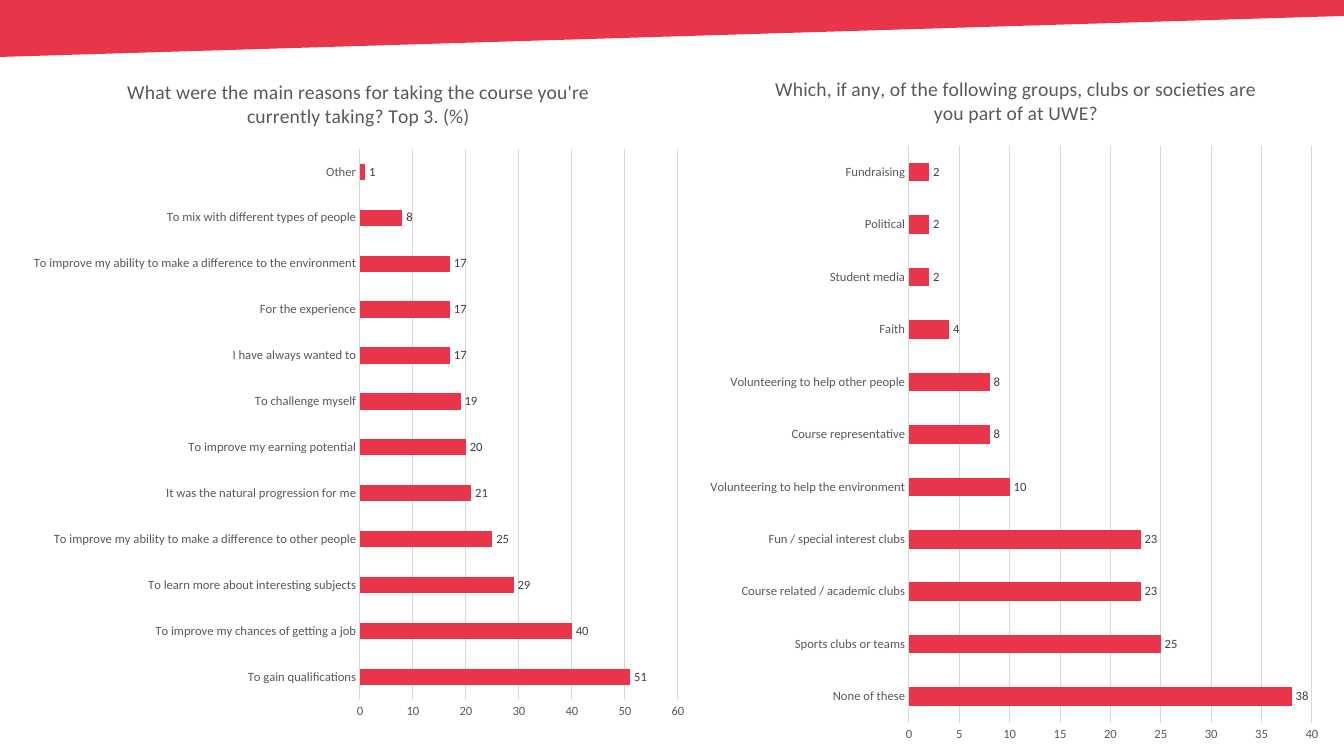
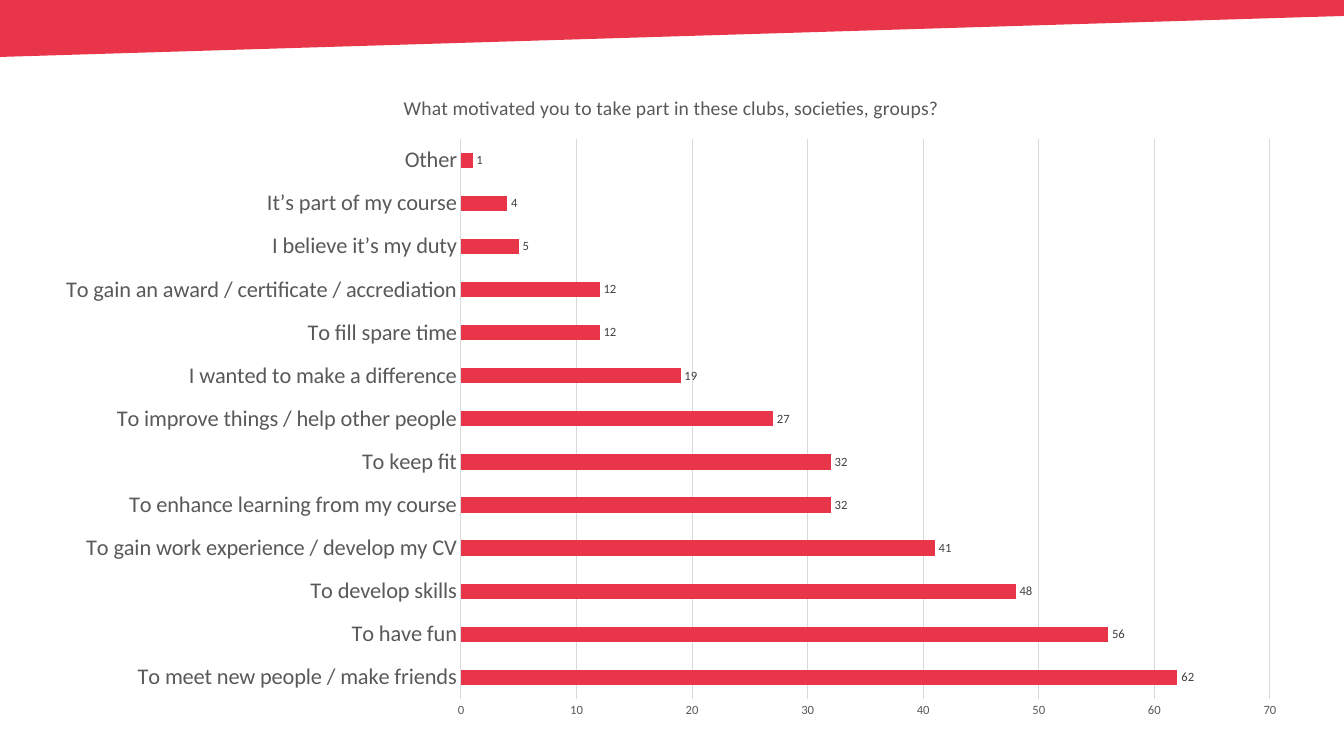
from dataclasses import dataclass

from lxml import etree
from pptx import Presentation
from pptx.chart.data import CategoryChartData
from pptx.dml.color import RGBColor
from pptx.enum.chart import XL_CHART_TYPE as ChartType
from pptx.enum.chart import XL_LABEL_POSITION as LabelPosition
from pptx.enum.chart import XL_TICK_MARK as TickMark
from pptx.oxml.ns import qn
from pptx.util import Pt

PX = 914400 / 100.8
PAGE_WIDTH, PAGE_HEIGHT = 1344, 756


@dataclass(frozen=True)
class Theme:
    font: str = "Calibri"
    accent: str = "E9354A"
    grid: str = "D9D9D9"
    text: str = "595959"
    value_text: str = "404040"
    title_size: int = 14
    label_size: int = 9
    large_label_size: int = 16
    line_width: float = 0.75


THEME = Theme()


@dataclass(frozen=True)
class Box:
    left: int
    top: int
    width: int
    height: int

    def emu(self):
        return [px(n) for n in (self.left, self.top, self.width, self.height)]


@dataclass(frozen=True)
class Survey:
    """A question, its answers from the bottom bar up, and its value scale."""
    question: str
    answers: tuple
    maximum: int
    step: int
    label_size: int = THEME.label_size


REASONS = Survey(
    "What were the main reasons for taking the course you're currently taking? Top 3. (%)",
    (
        ("To gain qualifications", 51),
        ("To improve my chances of getting a job", 40),
        ("To learn more about interesting subjects", 29),
        ("To improve my ability to make a difference to other people", 25),
        ("It was the natural progression for me", 21),
        ("To improve my earning potential", 20),
        ("To challenge myself", 19),
        ("I have always wanted to", 17),
        ("For the experience", 17),
        ("To improve my ability to make a difference to the environment", 17),
        ("To mix with different types of people", 8),
        ("Other", 1),
    ),
    maximum=60, step=10,
)

GROUPS = Survey(
    "Which, if any, of the following groups, clubs or societies are you part of at UWE?",
    (
        ("None of these", 38),
        ("Sports clubs or teams", 25),
        ("Course related / academic clubs", 23),
        ("Fun / special interest clubs", 23),
        ("Volunteering to help the environment", 10),
        ("Course representative", 8),
        ("Volunteering to help other people", 8),
        ("Faith", 4),
        ("Student media", 2),
        ("Political", 2),
        ("Fundraising", 2),
    ),
    maximum=40, step=5,
)

MOTIVES = Survey(
    "What motivated you to take part in these clubs, societies, groups?",
    (
        ("To meet new people / make friends", 62),
        ("To have fun", 56),
        ("To develop skills", 48),
        ("To gain work experience / develop my CV", 41),
        ("To enhance learning from my course", 32),
        ("To keep fit", 32),
        ("To improve things / help other people", 27),
        ("I wanted to make a difference", 19),
        ("To fill spare time", 12),
        ("To gain an award / certificate / accrediation", 12),
        ("I believe it’s my duty", 5),
        ("It’s part of my course", 4),
        ("Other", 1),
    ),
    maximum=70, step=10, label_size=THEME.large_label_size,
)


def px(length):
    return round(length * PX)


def style_font(font, size, color=THEME.text):
    font.name = THEME.font
    font.size = Pt(size)
    font.bold = False
    font.color.rgb = RGBColor.from_string(color)


def style_line(line):
    line.color.rgb = RGBColor.from_string(THEME.grid)
    line.width = Pt(THEME.line_width)


def add_band(page, box):
    """Draw the slanted band, deep on the left and thin on the right."""
    right_depth = 16
    builder = page.shapes.build_freeform(box.left, box.top, scale=PX)
    builder.add_line_segments([
        (box.left, box.top + box.height),
        (box.left + box.width, box.top + right_depth),
        (box.left + box.width, box.top),
    ])
    band = builder.convert_to_shape()
    band.shadow.inherit = False
    band.fill.solid()
    band.fill.fore_color.rgb = RGBColor.from_string(THEME.accent)
    band.line.fill.background()


def place_plot(chart, box, plot):
    """Fix the inner plot area; plot is given relative to the chart box."""
    area = chart.element.find(".//" + qn("c:plotArea"))
    layout = area.find(qn("c:layout"))
    if layout is None:
        layout = etree.Element(qn("c:layout"))
        area.insert(0, layout)
    manual = etree.SubElement(layout, qn("c:manualLayout"))
    for tag, value in (
        ("layoutTarget", "inner"), ("xMode", "edge"), ("yMode", "edge"),
        ("x", plot.left / box.width), ("y", plot.top / box.height),
        ("w", plot.width / box.width), ("h", plot.height / box.height),
    ):
        etree.SubElement(manual, qn("c:" + tag)).set("val", str(value))


def style_title(chart, question):
    chart.has_title = True
    chart.chart_title.include_in_layout = False
    span = chart.chart_title.text_frame.paragraphs[0].add_run()
    span.text = question
    style_font(span.font, THEME.title_size)


def style_axes(chart, survey):
    category, value = chart.category_axis, chart.value_axis
    for axis, size in ((category, survey.label_size), (value, THEME.label_size)):
        axis.major_tick_mark = axis.minor_tick_mark = TickMark.NONE
        style_font(axis.tick_labels.font, size)
    category.has_major_gridlines = False
    style_line(category.format.line)
    value.minimum_scale, value.maximum_scale = 0, survey.maximum
    value.major_unit = survey.step
    value.format.line.fill.background()
    value.has_major_gridlines = True
    style_line(value.major_gridlines.format.line)


def style_bars(chart):
    bars = chart.plots[0]
    bars.gap_width = 182
    bars.vary_by_categories = False
    fill = bars.series[0].format.fill
    fill.solid()
    fill.fore_color.rgb = RGBColor.from_string(THEME.accent)
    bars.has_data_labels = True
    labels = bars.data_labels
    labels.show_value = True
    labels.position = LabelPosition.OUTSIDE_END
    style_font(labels.font, THEME.label_size, THEME.value_text)


def add_survey_chart(page, box, plot, survey):
    names, values = zip(*survey.answers)
    data = CategoryChartData()
    data.categories = names
    data.add_series("Series 1", values)
    frame = page.shapes.add_chart(ChartType.BAR_CLUSTERED, *box.emu(), data)
    chart = frame.chart
    chart.has_legend = False
    style_font(chart.font, THEME.label_size)
    style_title(chart, survey.question)
    style_axes(chart, survey)
    style_bars(chart)
    place_plot(chart, box, plot)


def add_survey_page(deck, *panels):
    """Add a page with the band and one chart per (box, plot, survey) panel."""
    page = deck.slides.add_slide(deck.slide_layouts[6])
    add_band(page, Box(0, 0, PAGE_WIDTH, 57))
    for panel in panels:
        add_survey_chart(page, *panel)


def main():
    deck = Presentation()
    deck.slide_width, deck.slide_height = px(PAGE_WIDTH), px(PAGE_HEIGHT)
    add_survey_page(
        deck,
        (Box(20, 56, 677, 675), Box(340, 93, 318, 551), REASONS),
        (Box(699, 52, 634, 704), Box(210, 94, 403, 577), GROUPS),
    )
    add_survey_page(
        deck,
        (Box(41, 72, 1261, 659), Box(420, 67, 809, 560), MOTIVES),
    )
    deck.save("out.pptx")


if __name__ == "__main__":
    main()
